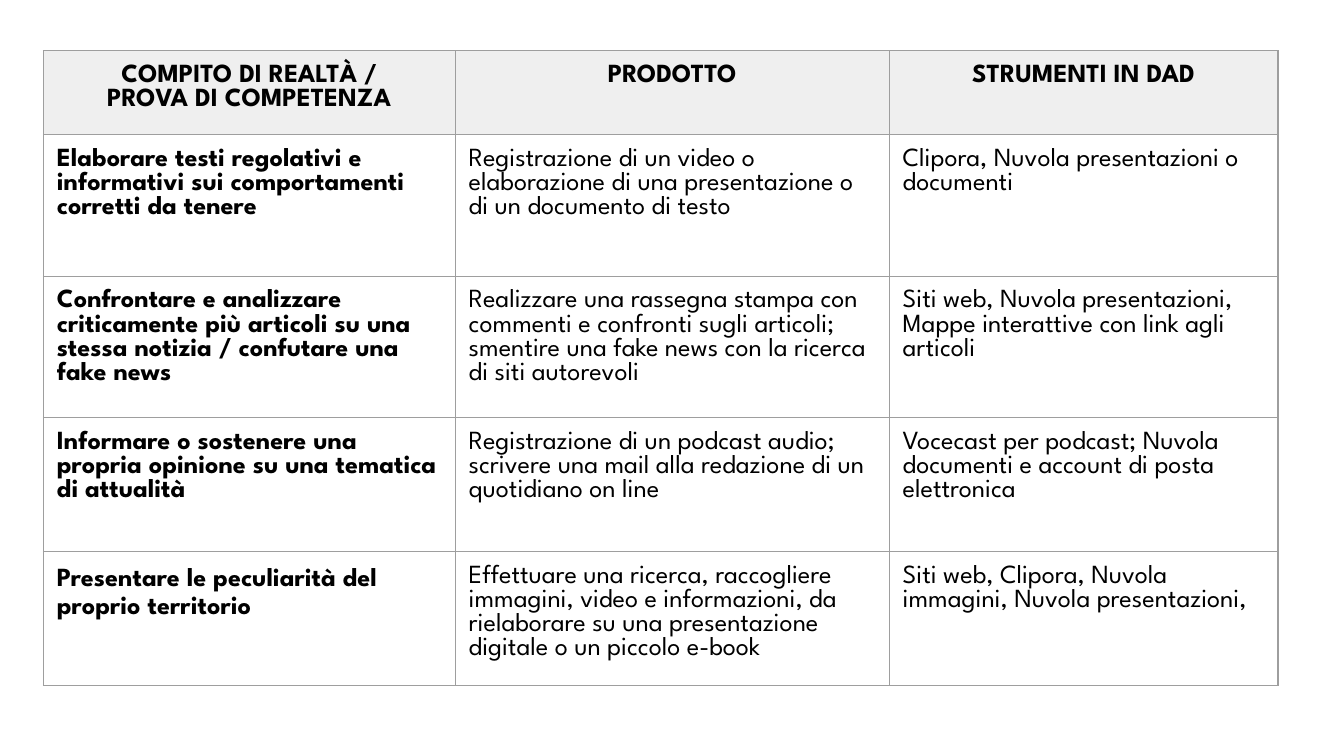
from lxml.etree import SubElement
from pptx import Presentation
from pptx.dml.color import RGBColor
from pptx.enum.text import PP_ALIGN as Align
from pptx.oxml.ns import qn
from pptx.util import Pt

# Content: each cell is a list of paragraphs
HEADER = [["COMPITO DI REALTÀ /", "PROVA DI COMPETENZA"], ["PRODOTTO"], ["STRUMENTI IN DAD"]]
TASKS = [
    [["Elaborare testi regolativi e informativi sui comportamenti corretti da tenere"],
     ["Registrazione di un video o elaborazione di una presentazione o di un documento di testo"],
     ["Clipora, Nuvola presentazioni o documenti"]],
    [["Confrontare e analizzare criticamente più articoli su una stessa notizia / "
      "confutare una fake news"],
     ["Realizzare una rassegna stampa con commenti e confronti sugli articoli; "
      "smentire una fake news con la ricerca di siti autorevoli"],
     ["Siti web, Nuvola presentazioni, Mappe interattive con link agli articoli"]],
    [["Informare o sostenere una propria opinione su una tematica di attualità"],
     ["Registrazione di un podcast audio;",
      "scrivere una mail alla redazione di un quotidiano on line"],
     ["Vocecast per podcast; Nuvola documenti e account di posta elettronica"]],
    [["Presentare le peculiarità del proprio territorio"],
     ["Effettuare una ricerca, raccogliere immagini, video e informazioni, "
      "da rielaborare su una presentazione digitale o un piccolo e-book"],
     ["Siti web, Clipora, Nuvola immagini, Nuvola presentazioni,"]],
]
ROWS = [HEADER] + TASKS

# Layout in points
LEFT, TOP = 23.3, 27.1
COLUMN_WIDTHS = [220.6, 232.5, 208.3]
ROW_HEIGHTS = [45, 75.9, 75.6, 71.9, 71.9]
MARGIN = 7.2
COLORS = {"text": "000000", "header": "EFEFEF", "border": "9E9E9E"}
FONT, FONT_SIZE = "League Spartan", 14


def add_borders(cell):
    properties = cell._tc.get_or_add_tcPr()
    for side in ("a:lnL", "a:lnR", "a:lnT", "a:lnB"):
        line = SubElement(properties, qn(side), w=str(Pt(0.75)))
        fill = SubElement(line, qn("a:solidFill"))
        SubElement(fill, qn("a:srgbClr"), val=COLORS["border"])


def write_paragraphs(cell, texts, is_header, is_bold):
    frame = cell.text_frame
    for index, text in enumerate(texts):
        paragraph = frame.add_paragraph() if index else frame.paragraphs[0]
        paragraph.alignment = Align.CENTER if is_header else Align.LEFT
        run = paragraph.add_run()
        run.text = text
        run.font.name = FONT
        run.font.size = Pt(FONT_SIZE)
        run.font.bold = is_bold
        run.font.color.rgb = RGBColor.from_string(COLORS["text"])


presentation = Presentation()
presentation.slide_width = Pt(720)
presentation.slide_height = Pt(405)
slide = presentation.slides.add_slide(presentation.slide_layouts[6])

# Table frame
table = slide.shapes.add_table(
    len(ROWS), len(COLUMN_WIDTHS), Pt(LEFT), Pt(TOP),
    Pt(sum(COLUMN_WIDTHS)), Pt(sum(ROW_HEIGHTS))).table
table.horz_banding = False
table.first_row = False
for column, width in zip(table.columns, COLUMN_WIDTHS):
    column.width = Pt(width)
for row, height in zip(table.rows, ROW_HEIGHTS):
    row.height = Pt(height)

# Cells
for row_index, row_texts in enumerate(ROWS):
    is_header = row_index == 0
    for column_index, texts in enumerate(row_texts):
        cell = table.cell(row_index, column_index)
        cell.margin_left = cell.margin_right = Pt(MARGIN)
        cell.margin_top = cell.margin_bottom = Pt(MARGIN)
        add_borders(cell)
        if is_header:
            cell.fill.solid()
            cell.fill.fore_color.rgb = RGBColor.from_string(COLORS["header"])
        else:
            cell.fill.background()
        write_paragraphs(cell, texts, is_header, is_header or column_index == 0)

# The last task is set with looser lines
last_task = table.cell(len(ROWS) - 1, 0).text_frame.paragraphs[0]
last_task.line_spacing = 1.15
last_task.space_after = Pt(16)

presentation.save("out.pptx")
